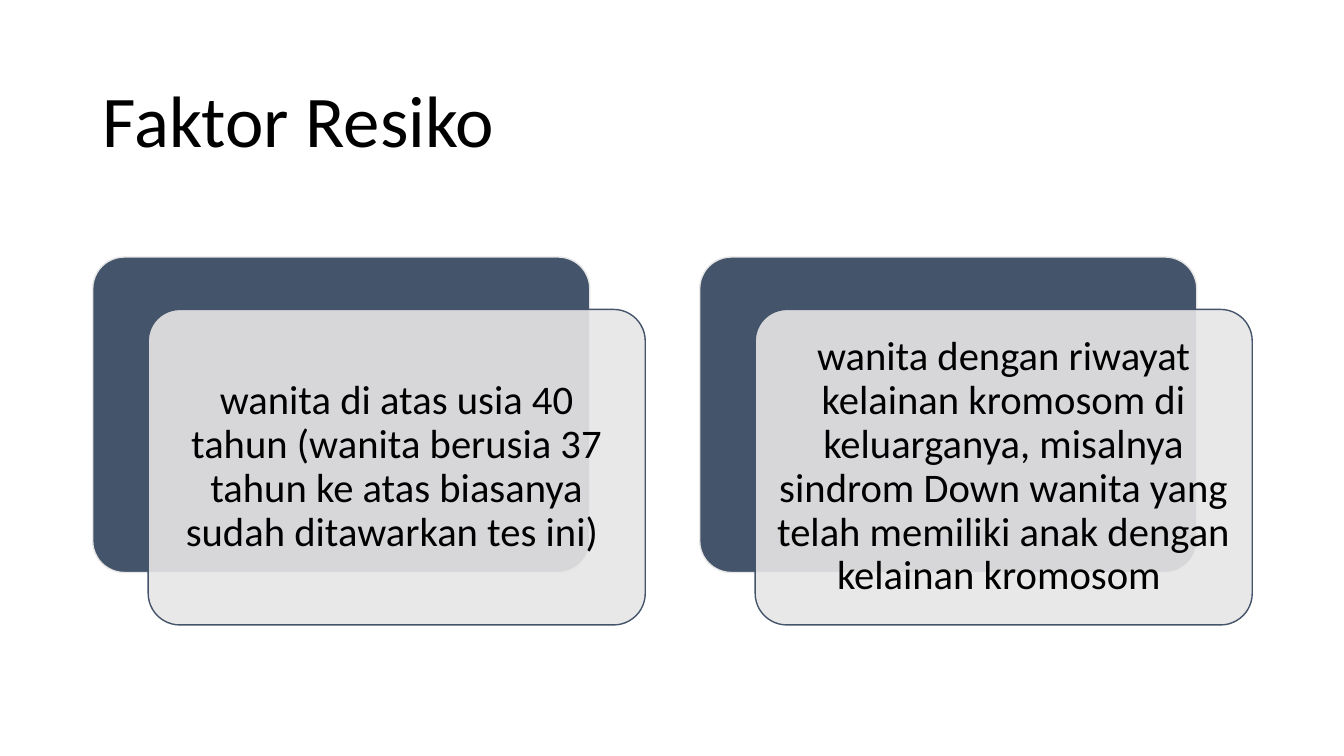
"""Builds the "Faktor Resiko" slide with two layered risk-factor cards."""
from lxml.etree import SubElement
from pptx import Presentation
from pptx.dml.color import RGBColor
from pptx.enum.shapes import MSO_SHAPE
from pptx.enum.text import MSO_ANCHOR, PP_ALIGN
from pptx.oxml.ns import qn
from pptx.util import Inches, Pt

HEADING = "Faktor Resiko"
RISK_FACTORS = [
    "wanita di atas usia 40 tahun (wanita berusia 37 tahun ke atas biasanya "
    "sudah ditawarkan tes ini) ",
    "wanita dengan riwayat kelainan kromosom di keluarganya, misalnya sindrom "
    "Down wanita yang telah memiliki anak dengan kelainan kromosom ",
]
COLORS = {"navy": "44546A", "pale": "E7E6E6", "text": "000000"}
FONT = "Calibri"
LEFT, TOP = 0.92, 2.55
CARD_WIDTH, CARD_HEIGHT = 4.93, 3.13
CARD_STEP = 6.02
SHIFT_X, SHIFT_Y = 0.55, 0.52
INSET = 0.12


def color(name):
    return RGBColor.from_string(COLORS[name])


def write(frame, text, size, align):
    frame.word_wrap = True
    frame.vertical_anchor = MSO_ANCHOR.MIDDLE
    frame.text = text
    paragraph = frame.paragraphs[0]
    paragraph.alignment = align
    paragraph.line_spacing = 0.9
    paragraph.font.name = FONT
    paragraph.font.size = Pt(size)
    paragraph.font.color.rgb = color("text")


def add_card(slide, left, top, fill, line):
    card = slide.shapes.add_shape(
        MSO_SHAPE.ROUNDED_RECTANGLE, Inches(left), Inches(top),
        Inches(CARD_WIDTH), Inches(CARD_HEIGHT))
    card.adjustments[0] = 0.1
    card.shadow.inherit = False
    card.fill.solid()
    card.fill.fore_color.rgb = color(fill)
    card.line.color.rgb = color(line)
    card.line.width = Pt(1)
    return card


def set_opacity(card, percent):
    fill_color = card.fill._xPr.find(qn("a:solidFill"))[0]
    SubElement(fill_color, qn("a:alpha")).set("val", str(percent * 1000))


def main():
    deck = Presentation()
    deck.slide_width, deck.slide_height = Inches(13.33), Inches(7.5)
    slide = deck.slides.add_slide(deck.slide_layouts[5])

    heading = slide.shapes.title
    heading.left, heading.top = Inches(LEFT), Inches(0.61)
    heading.width, heading.height = Inches(11.5), Inches(1.24)
    write(heading.text_frame, HEADING, 52, PP_ALIGN.LEFT)

    for index, factor in enumerate(RISK_FACTORS):
        left = LEFT + index * CARD_STEP
        add_card(slide, left, TOP, "navy", "pale")
        front = add_card(slide, left + SHIFT_X, TOP + SHIFT_Y, "pale", "navy")
        set_opacity(front, 90)
        frame = front.text_frame
        frame.margin_left = frame.margin_right = Inches(INSET)
        frame.margin_top = frame.margin_bottom = Inches(INSET)
        write(frame, factor, 29, PP_ALIGN.CENTER)

    deck.save("out.pptx")


if __name__ == "__main__":
    main()
